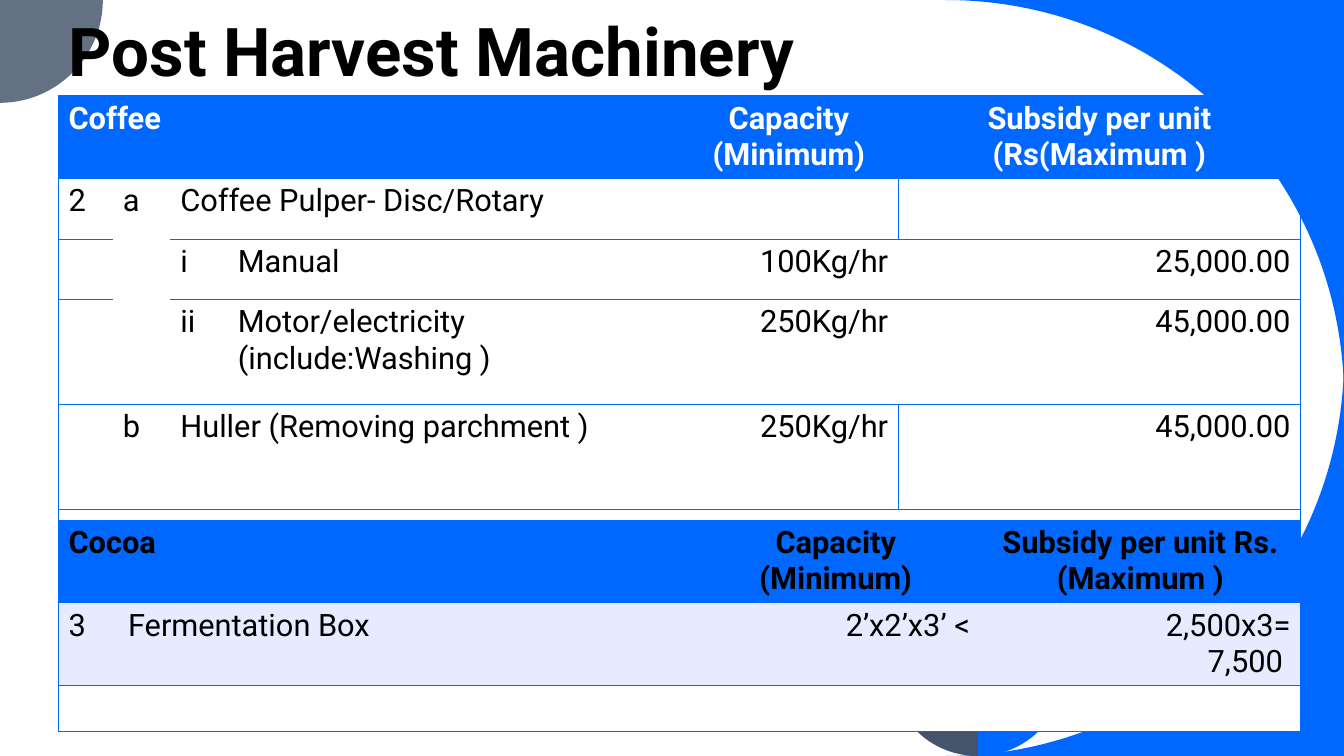
from typing import NamedTuple

from lxml.etree import SubElement
from pptx import Presentation
from pptx.dml.color import RGBColor
from pptx.enum.text import MSO_ANCHOR, MSO_AUTO_SIZE, PP_ALIGN
from pptx.oxml.ns import qn
from pptx.util import Emu, Pt

PX = 9144  # 100 px to the inch
FONT = "Roboto"
BLUE, SLATE, NAVY = "0068FF", "637183", "44546A"
BLACK, WHITE, LAVENDER = "000000", "FFFFFF", "E7EBFF"
PLAIN_STYLE = "{2D5ABB26-0587-4C30-8999-92F81FD0307C}"


class Outline(NamedTuple):
    """A start point, then lines (x, y) and cubic curves (x1, y1, x2, y2, x, y)."""
    color: str
    start: tuple
    segments: list


class Grid(NamedTuple):
    left: int
    top: int
    cols: list
    heights: list
    rows: list
    merges: list      # (first row, first column, last row, last column)
    fills: list       # one per row, None for no fill
    header_color: str
    line_width: float
    dividers: list    # rows with a line left of the last column


OUTLINES = [
    Outline(BLUE, (1333, 0), [(938, 0), (1157, 0, 1333, 177, 1333, 395)]),
    Outline(BLUE, (1333, 355), [(1333, 573, 1157, 750, 938, 750), (1333, 750)]),
    Outline(SLATE, (0, 0), [(102, 0), (102, 56, 56, 102, 0, 102)]),
    Outline(BLUE, (1056, 611), [(1056, 664), (1056, 712, 1017, 750, 970, 750),
                                (970, 697), (970, 653, 1004, 616, 1047, 612)]),
    Outline(NAVY, (884, 611), [(884, 664), (884, 712, 922, 750, 970, 750),
                               (970, 697), (970, 653, 936, 616, 893, 612)]),
]

COFFEE = Grid(
    58, 95, [54, 57, 57, 448, 217, 399], [82, 60, 60, 104, 104, 67],
    [["Coffee", "", "", "", "Capacity (Minimum)", "Subsidy per unit (Rs(Maximum )"],
     ["2", "a", "Coffee Pulper- Disc/Rotary", "", "", ""],
     ["", "", "i", "Manual", "100Kg/hr", "25,000.00"],
     ["", "", "ii", "Motor/electricity (include:Washing )", "250Kg/hr", "45,000.00"],
     ["", "b", "Huller (Removing parchment )", "", "250Kg/hr", "45,000.00"],
     [""] * 6],
    [(0, 0, 0, 3), (1, 1, 3, 1), (1, 2, 1, 3), (4, 2, 4, 3), (5, 0, 5, 5)],
    [BLUE] + [None] * 5, WHITE, 0.5, [1, 4])

COCOA = Grid(
    58, 516, [59, 569, 286, 318], [82, 82, 46],
    [["Cocoa", "", "Capacity (Minimum)", "Subsidy per unit Rs. (Maximum )"],
     ["3", "Fermentation Box", "2’x2’x3’ <", "2,500x3=\n7,500 "],
     [""] * 4],
    [(0, 0, 0, 1), (2, 0, 2, 3)],
    [BLUE, LAVENDER, WHITE], BLACK, 1, [])


def rgb(color: str) -> RGBColor:
    return RGBColor.from_string(color)


def format_runs(p, size: float, color: str, bold: bool) -> None:
    for r in p.runs:
        r.font.name, r.font.size, r.font.bold = FONT, Pt(size), bold
        r.font.color.rgb = rgb(color)


def draw_outline(s, outline: Outline) -> None:
    points = [seg[k:k + 2] for seg in outline.segments for k in range(0, len(seg), 2)]
    builder = s.shapes.build_freeform(*outline.start, scale=PX)
    builder.add_line_segments(points, close=True)
    sp = builder.convert_to_shape()

    # Join the three points of each curve into one cubic segment
    lines = iter(list(sp._element.iter(qn("a:lnTo"))))
    for seg in outline.segments:
        first = next(lines)
        if len(seg) == 6:
            first.tag = qn("a:cubicBezTo")
            for _ in range(2):
                line = next(lines)
                first.append(line[0])
                line.getparent().remove(line)

    sp.shadow.inherit = False
    sp.fill.solid()
    sp.fill.fore_color.rgb = rgb(outline.color)
    sp.line.fill.background()


def set_borders(cell, sides: dict, width: float) -> None:
    tc_pr = cell._tc.get_or_add_tcPr()
    for side, shown in sides.items():
        if shown:
            ln = SubElement(tc_pr, qn(f"a:ln{side}"), w=str(Pt(width)))
            fill = SubElement(ln, qn("a:solidFill"))
            SubElement(fill, qn("a:srgbClr"), val=BLUE)


def draw_grid(s, grid: Grid) -> None:
    frame = s.shapes.add_table(
        len(grid.rows), len(grid.cols), Emu(grid.left * PX), Emu(grid.top * PX),
        Emu(sum(grid.cols) * PX), Emu(sum(grid.heights) * PX))
    table = frame.table
    table.horz_banding = False
    table._tbl.tblPr.find(qn("a:tableStyleId")).text = PLAIN_STYLE
    for col, width in zip(table.columns, grid.cols):
        col.width = Emu(width * PX)
    for row, height in zip(table.rows, grid.heights):
        row.height = Emu(height * PX)

    ends = {}
    for r0, c0, r1, c1 in grid.merges:
        table.cell(r0, c0).merge(table.cell(r1, c1))
        ends[r0, c0] = (r1, c1)

    last = len(grid.cols) - 1
    for i, texts in enumerate(grid.rows):
        for j, text in enumerate(texts):
            cell = table.cell(i, j)
            if cell.is_spanned:
                continue
            r1, c1 = ends.get((i, j), (i, j))
            divided = i in grid.dividers
            set_borders(cell, {
                "L": j == 0 or (divided and j == last),
                "R": c1 == last or (divided and j == last - 1),
                "T": True, "B": i == r1}, grid.line_width)
            if grid.fills[i]:
                cell.fill.solid()
                cell.fill.fore_color.rgb = rgb(grid.fills[i])
            else:
                cell.fill.background()
            if not text:
                continue
            cell.text_frame.text = text
            for p in cell.text_frame.paragraphs:
                if j >= last - 1:
                    p.alignment = PP_ALIGN.RIGHT if i else PP_ALIGN.CENTER
                format_runs(p, 22, BLACK if i else grid.header_color, i == 0)


def place_title(s, text: str) -> None:
    title = s.shapes.title
    s.shapes._spTree.append(title._element)  # in front of the corner shapes
    title.left, title.top = Emu(58 * PX), Emu(13 * PX)
    title.width, title.height = Emu(1066 * PX), Emu(82 * PX)
    tf = title.text_frame
    tf.text = text
    tf.word_wrap = True
    tf.auto_size = MSO_AUTO_SIZE.NONE
    tf.vertical_anchor = MSO_ANCHOR.BOTTOM
    p = tf.paragraphs[0]
    p.alignment = PP_ALIGN.LEFT
    p.line_spacing = 0.9
    format_runs(p, 48, BLACK, True)


def main() -> None:
    prs = Presentation()
    prs.slide_width, prs.slide_height = Emu(1333 * PX), Emu(750 * PX)
    s = prs.slides.add_slide(prs.slide_layouts[5])

    # Corner shapes
    for outline in OUTLINES:
        draw_outline(s, outline)

    # Title and tables
    place_title(s, "Post Harvest Machinery")
    for grid in (COFFEE, COCOA):
        draw_grid(s, grid)

    prs.save("out.pptx")


if __name__ == "__main__":
    main()
